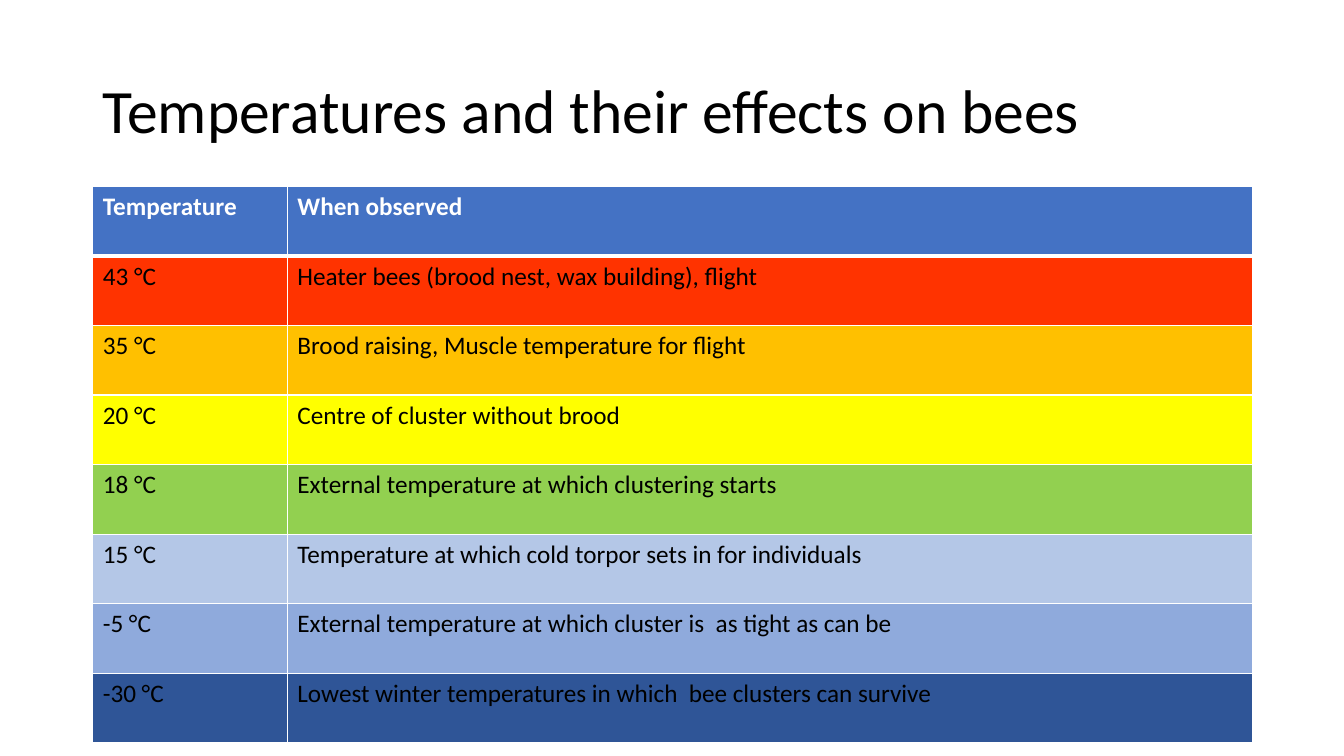
import lxml.etree
import pptx
import pptx.dml.color
import pptx.enum.text
import pptx.oxml.ns
import pptx.util

Inches = pptx.util.Inches
Pt = pptx.util.Pt

COLOURS = {
    "white": "FFFFFF",
    "black": "000000",
    "header": "4472C4",
    "red": "FF3300",
    "amber": "FFC000",
    "yellow": "FFFF00",
    "green": "92D050",
    "pale blue": "B4C7E7",
    "mid blue": "8FAADC",
    "dark blue": "2F5597",
}

ROWS = [
    ("header", "Temperature", "When observed"),
    ("red", "43 °C", "Heater bees (brood nest, wax building), flight"),
    ("amber", "35 °C", "Brood raising, Muscle temperature for flight"),
    ("yellow", "20 °C", "Centre of cluster without brood"),
    ("green", "18 °C", "External temperature at which clustering starts"),
    ("pale blue", "15 °C", "Temperature at which cold torpor sets in for individuals"),
    ("mid blue", "-5 °C", "External temperature at which cluster is  as tight as can be"),
    ("dark blue", "-30 °C", "Lowest winter temperatures in which  bee clusters can survive"),
]
COLUMN_WIDTHS = (1.93, 9.57)
ROW_HEIGHT = 0.69
LEFT, TABLE_TOP, WIDTH = 0.92, 1.85, 11.5


def rgb(name):
    return pptx.dml.color.RGBColor.from_string(COLOURS[name])


def write(para, text, colour, **formats):
    span = para.add_run()
    span.text = text
    span.font.color.rgb = rgb(colour)
    for name, value in {"name": "Calibri", **formats}.items():
        setattr(span.font, name, value)


def add_title(page, text):
    box = page.shapes.add_textbox(Inches(LEFT), Inches(0.4), Inches(WIDTH), Inches(1.45))
    frame = box.text_frame
    frame.word_wrap = True
    frame.vertical_anchor = pptx.enum.text.MSO_ANCHOR.MIDDLE
    para = frame.paragraphs[0]
    para.line_spacing = 0.9
    write(para, text, "black", size=Pt(44))


def add_borders(cell, widths):
    """Draw white cell borders; widths maps a side (L, R, T, B) to points."""
    qn = pptx.oxml.ns.qn
    properties = cell._tc.get_or_add_tcPr()
    for side, width in widths.items():
        line = lxml.etree.SubElement(properties, qn(f"a:ln{side}"), w=str(Pt(width)))
        fill = lxml.etree.SubElement(line, qn("a:solidFill"))
        lxml.etree.SubElement(fill, qn("a:srgbClr"), val=COLOURS["white"])


def fill_cell(cell, text, colour, row):
    is_header = row == 0
    add_borders(cell, {"L": 1, "R": 1, "T": 3 if row == 1 else 1, "B": 3 if is_header else 1})
    cell.fill.solid()
    cell.fill.fore_color.rgb = rgb(colour)
    write(cell.text_frame.paragraphs[0], text, "white" if is_header else "black",
          size=Pt(18), bold=is_header)


def add_temperature_table(page):
    table = page.shapes.add_table(
        len(ROWS), len(COLUMN_WIDTHS), Inches(LEFT), Inches(TABLE_TOP),
        Inches(WIDTH), Inches(ROW_HEIGHT * len(ROWS))).table
    table.horz_banding = False
    for column, width in zip(table.columns, COLUMN_WIDTHS):
        column.width = Inches(width)
    for row, (colour, *texts) in enumerate(ROWS):
        table.rows[row].height = Inches(ROW_HEIGHT)
        for column, text in enumerate(texts):
            fill_cell(table.cell(row, column), text, colour, row)


def main():
    deck = pptx.Presentation()
    deck.slide_width = Inches(13.33)
    deck.slide_height = Inches(7.5)
    page = deck.slides.add_slide(deck.slide_layouts[6])
    add_title(page, "Temperatures and their effects on bees")
    add_temperature_table(page)
    deck.save("out.pptx")


if __name__ == "__main__":
    main()
